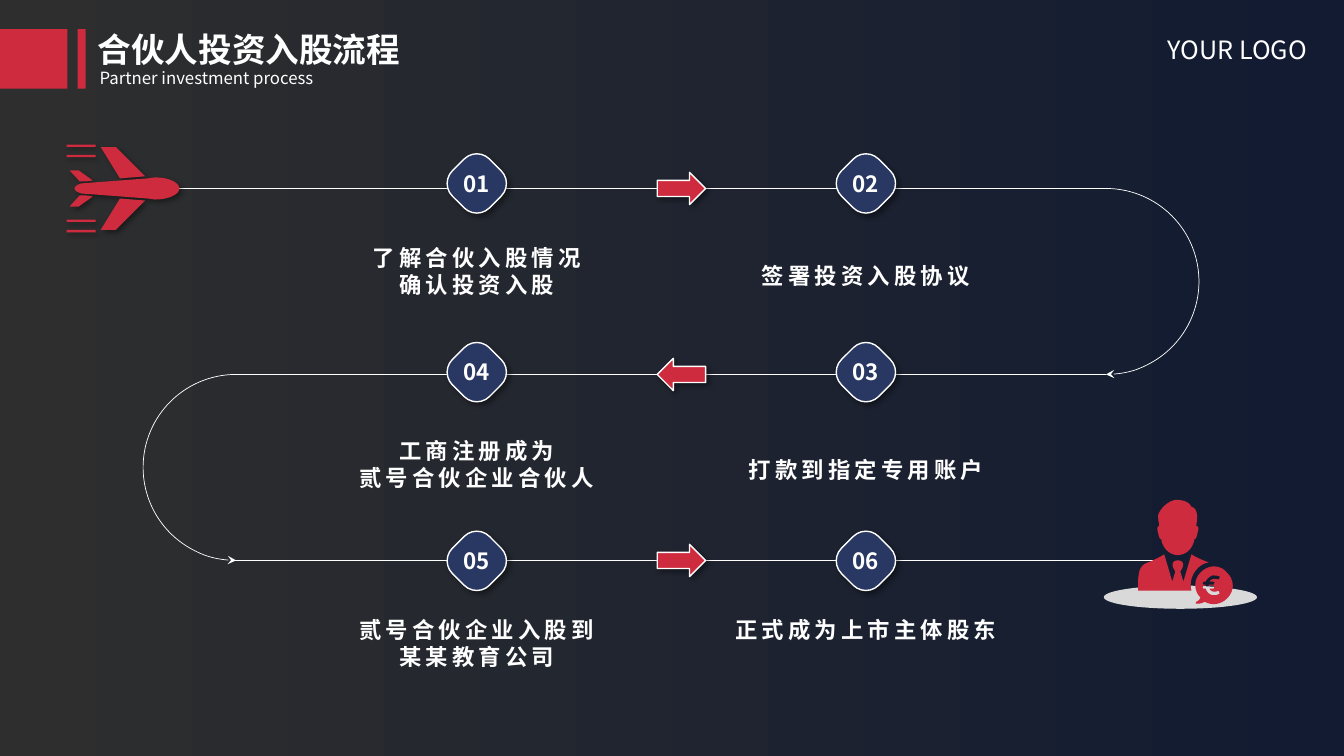
"""Build a slide that shows six steps of a partner investment along a winding path."""
from dataclasses import dataclass
from lxml import etree
from pptx import Presentation
from pptx.dml.color import RGBColor
from pptx.enum.shapes import MSO_CONNECTOR, MSO_SHAPE
from pptx.enum.text import MSO_ANCHOR, MSO_AUTO_SIZE, PP_ALIGN
from pptx.oxml.ns import qn
from pptx.shapes.autoshape import Shape
from pptx.slide import Slide
from pptx.util import Emu, Inches, Pt

LINE = MSO_CONNECTOR.STRAIGHT
ARC, OVAL, RECT, ROUND = MSO_SHAPE.ARC, MSO_SHAPE.OVAL, MSO_SHAPE.RECTANGLE, MSO_SHAPE.ROUNDED_RECTANGLE
EAST, WEST = MSO_SHAPE.RIGHT_ARROW, MSO_SHAPE.LEFT_ARROW
TOP, NO_FIT, LEFT, CENTER = MSO_ANCHOR.TOP, MSO_AUTO_SIZE.NONE, PP_ALIGN.LEFT, PP_ALIGN.CENTER
WHITE, GREY = RGBColor(0xFF, 0xFF, 0xFF), RGBColor(0xD9, 0xD9, 0xD9)
RED, BLUE = RGBColor(0xCE, 0x2B, 0x3E), RGBColor(0x29, 0x38, 0x62)
COAL, NAVY = RGBColor(0x2E, 0x2E, 0x2E), RGBColor(0x12, 0x1B, 0x31)
FONT = "Noto Sans CJK SC"
CELL = Inches(0.1)
COLS, ROWS = 133.33, 75
STOPS = (47.3, 85.9)
LANES = [18.7 + 18.45 * i for i in range(3)]
BADGES = [18.2 + 18.72 * i for i in range(3)]
Ring = list[tuple[float, ...]]


@dataclass(frozen=True)
class Step:
    label: str
    col: int
    row: int
    top: float
    lines: tuple[str, ...]


STEPS = (
    Step("01", 0, 0, 23.7, ("了解合伙入股情况", "确认投资入股")),
    Step("02", 1, 0, 25.5, ("签署投资入股协议",)),
    Step("03", 1, 1, 44.8, ("打款到指定专用账户",)),
    Step("04", 0, 1, 42.9, ("工商注册成为", "贰号合伙企业合伙人")),
    Step("05", 0, 2, 60.6, ("贰号合伙企业入股到", "某某教育公司")),
    Step("06", 1, 2, 60.6, ("正式成为上市主体股东",)),
)
HALF: list[Ring] = [
    [(6.6, 14.35), (9.5, 14.35), (9.5, 14.58), (6.6, 14.58)],
    [(6.6, 15.37), (9.5, 15.37), (9.5, 15.6), (6.6, 15.6)],
    [(10, 14.6), (11.5, 14.6), (14.4, 17.5), (11.9, 17.7)],
    [(6.9, 16.9), (7.8, 16.9), (9.2, 17.9), (8.6, 18), (7.9, 18)],
]
HULL: Ring = [
    (15.4, 17.6), (16.7, 17.6, 17.8, 18.1, 17.8, 18.7), (17.8, 19.3, 16.7, 19.8, 15.4, 19.8), (14.7, 19.7),
    (8.1, 19.2), (7.7, 19.1, 7.4, 18.9, 7.4, 18.7), (7.4, 18.5, 7.7, 18.3, 8.1, 18.2), (14.7, 17.7),
]
PLANE = HALF + [[(x, 2 * LANES[0] - y) for x, y in ring] for ring in HALF] + [HULL]
HEAD: Ring = [
    (116.7, 49.6), (117.2, 49.6, 117.5, 49.7, 117.7, 49.8), (118.1, 50, 118.2, 50.3, 118.2, 50.3),
    (118.2, 50.3, 119, 50.3, 118.7, 52), (118.7, 52.2), (118.8, 52.2, 119, 52.3, 118.8, 52.9),
    (118.7, 53.4, 118.6, 53.5, 118.5, 53.5), (118.4, 54.1, 118, 54.8, 117.3, 55),
    (117, 55.1, 116.7, 55.1, 116.4, 55), (115.7, 54.8, 115.3, 54.1, 115.2, 53.5),
    (115.1, 53.5, 115, 53.4, 114.9, 52.9), (114.7, 52.3, 114.9, 52.2, 115, 52.2), (115, 52),
    (114.9, 51.7, 114.9, 51.4, 114.9, 51.1), (115, 50.8, 115.2, 50.5, 115.4, 50.3),
    (115.6, 50.1, 115.7, 50, 115.9, 49.9), (116, 49.8, 116.4, 49.6, 116.7, 49.6),
]
SUIT: Ring = [
    (115.5, 55), (116.3, 57.7), (116.6, 56.7), (115.9, 55.7, 116.7, 55.6, 116.8, 55.6), (116.9, 55.6),
    (117, 55.6, 117.8, 55.7, 117.1, 56.7), (117.4, 57.7), (118.2, 55),
    (118.2, 55, 118.8, 55.4, 119.9, 55.8), (119.4, 55.9, 119.1, 56.1, 118.8, 56.4),
    (118.2, 57, 118, 57.9, 118.2, 58.6), (112.9, 58.6),
    (112.9, 57, 112.9, 56.1, 113.9, 55.8), (114.9, 55.4, 115.5, 55, 115.5, 55),
]
BUBBLE: Ring = [
    (120.4, 56.2), (120.9, 56.2, 121.4, 56.4, 121.7, 56.8), (122.5, 57.5, 122.5, 58.7, 121.7, 59.4),
    (121.1, 60, 120.2, 60.1, 119.5, 59.7), (119.2, 59.9, 118.9, 59.9, 118.7, 59.9),
    (118.6, 59.9, 118.6, 59.8, 118.7, 59.7), (118.9, 59.6, 119, 59.5, 119.1, 59.3),
    (118.4, 58.6, 118.4, 57.5, 119.1, 56.8), (119.5, 56.4, 120, 56.2, 120.4, 56.2),
]
EURO: Ring = [
    (120.3, 57.1), (120.2, 57.1, 119.8, 57.3, 119.6, 57.7), (119.4, 57.7), (119.3, 57.9), (119.4, 58),
    (119.6, 58), (119.6, 58.1), (119.4, 58.1), (119.3, 58.3), (119.4, 58.4), (119.6, 58.4),
    (119.8, 58.9, 120.2, 59.2, 120.8, 59), (121, 58.9), (120.9, 58.6),
    (120.5, 58.8, 120.1, 58.7, 120, 58.4), (120.4, 58.4), (120.5, 58.2), (120.4, 58.1), (119.9, 58.1),
    (119.9, 58), (120.4, 58), (120.5, 57.8), (120.4, 57.7), (120, 57.7),
    (120.2, 57.4, 120.5, 57.4, 120.9, 57.5), (121, 57.3), (121, 57.2), (120.8, 57.1, 120.6, 57.1, 120.3, 57.1),
]


def cells(*counts: float) -> list[Emu]:
    return [Emu(round(count * CELL)) for count in counts]


def mid(x: float, y: float, width: float, height: float) -> list[Emu]:
    return cells(x - width / 2, y - height / 2, width, height)


def trace(ring: Ring, cuts: int = 8) -> list[tuple[float, float]]:
    spots = [ring[0]]
    for part in ring[1:]:
        ends = (spots[-1], part[:2], part[2:4], part[4:])
        for t in [i / cuts for i in range(1, cuts + 1)] if len(part) == 6 else []:
            shares = ((1 - t) ** 3, 3 * (1 - t) ** 2 * t, 3 * (1 - t) * t * t, t ** 3)
            spots.append(tuple(sum(s * e[k] for s, e in zip(shares, ends)) for k in (0, 1)))
        if len(part) == 2:
            spots.append(part)
    return [(x * CELL, y * CELL) for x, y in spots]


def style(shape: Shape, fill: RGBColor | None, line: float = 0, shade: bool = False) -> Shape:
    shape.fill.background()
    if fill is not None:
        shape.fill.solid()
        shape.fill.fore_color.rgb = fill
    shape.line.fill.background()
    if line:
        shape.line.color.rgb, shape.line.width = WHITE, Pt(line)
    shape.shadow.inherit = False
    if shade:
        cast = etree.SubElement(shape._element.spPr.find(qn("a:effectLst")), qn("a:outerShdw"),
                                blurRad=str(Pt(4)), dist=str(Pt(3)), dir="2700000", algn="tl", rotWithShape="0")
        etree.SubElement(etree.SubElement(cast, qn("a:srgbClr"), val="000000"), qn("a:alpha"), val="40000")
    return shape


def icon(slide: Slide, rings: list[Ring], shade: bool = False) -> None:
    paths = [trace(ring) for ring in rings]
    pen = slide.shapes.build_freeform(*paths[0][0])
    for path in paths:
        if path is not paths[0]:
            pen.move_to(*path[0])
        pen.add_line_segments(path[1:], close=True)
    style(pen.convert_to_shape(), RED, shade=shade)


def write(shape: Shape, lines: tuple[str, ...], size: float, bold: bool = False, align: PP_ALIGN = CENTER,
          gap: int = 0, wrap: bool = True, face: str = FONT) -> None:
    frame = shape.text_frame
    frame.word_wrap, frame.auto_size, frame.vertical_anchor = wrap, NO_FIT, TOP
    frame.text = "\n".join(lines)
    for para in frame.paragraphs:
        para.alignment, para.line_spacing = align, Pt(size * 1.2)
        para.font.name, para.font.size, para.font.bold = face, Pt(size), bold
        para.font.color.rgb = WHITE
        props = para._p.pPr.find(qn("a:defRPr"))
        etree.SubElement(props, qn("a:ea"), typeface=face)
        props.set("spc", str(gap))


def route(slide: Slide) -> None:
    for y, start, end, kind in zip(LANES, (14.1, 23.3, 23.3), (109.7, 109.7, 115.4), (EAST, WEST, EAST)):
        lane = slide.shapes.add_connector(LINE, *cells(start, y, end, y))
        lane.line.color.rgb, lane.line.width = WHITE, Pt(0.5)
        etree.SubElement(lane._element.spPr, qn("a:effectLst"))
        style(slide.shapes.add_shape(kind, *mid(67.6, y, 4.8, 3.2)), RED, 1, True)
    size = LANES[1] - LANES[0]
    for left, top, turn, tip in ((100.5, LANES[0], (270, 90), "a:tailEnd"), (14.2, LANES[1], (90, 270), "a:headEnd")):
        bend = style(slide.shapes.add_shape(ARC, *cells(left, top, size, size)), None, 0.5)
        bend.adjustments[0], bend.adjustments[1] = [angle * 0.6 for angle in turn]
        etree.SubElement(bend._element.spPr.find(qn("a:ln")), qn(tip), type="stealth")


def stop(slide: Slide, step: Step) -> None:
    x, y = STOPS[step.col], BADGES[step.row]
    badge = style(slide.shapes.add_shape(ROUND, *mid(x, y, 5.2, 5.2)), BLUE, 1, True)
    badge.rotation, badge.adjustments[0] = 45, 0.341
    write(slide.shapes.add_textbox(*mid(x, y, 5.2, 3.7)), (step.label,), 16, True)
    note = slide.shapes.add_textbox(*cells(x - 19.9, step.top, 39.8, 1 + 2.7 * len(step.lines)))
    write(note, step.lines, 16, True, gap=300)


def header(slide: Slide) -> None:
    title = slide.shapes.title
    title.left, title.top, title.width, title.height = cells(8.7, 2.4, 83.9, 5.1)
    write(title, ("合伙人投资入股流程",), 24, True, LEFT)
    write(slide.shapes.add_textbox(*cells(8.9, 6.2, 73, 3)), ("Partner investment process",), 12, align=LEFT)
    for left, width in ((0, 6.7), (7.7, 0.8)):
        style(slide.shapes.add_shape(RECT, *cells(left, 2.9, width, 5.9)), RED)
    mark = slide.shapes.add_textbox(*cells(114.8, 2.9, 15.9, 4))
    write(mark, ("YOUR LOGO",), 18, wrap=False, face="Noto Sans CJK JP")


deck = Presentation()
deck.slide_width, deck.slide_height = cells(COLS, ROWS)
page = deck.slides.add_slide(deck.slide_layouts[5])
back = page.background.fill
back.gradient()
back.gradient_angle = 0
for point, tone in zip(back.gradient_stops, (COAL, NAVY)):
    point.color.rgb = tone
route(page)
for item in STEPS:
    stop(page, item)
style(page.shapes.add_shape(OVAL, *cells(109.5, 58.1, 15.2, 2.3)), GREY)
icon(page, [HEAD, SUIT, BUBBLE, EURO])
icon(page, PLANE, True)
header(page)
deck.save("out.pptx")
